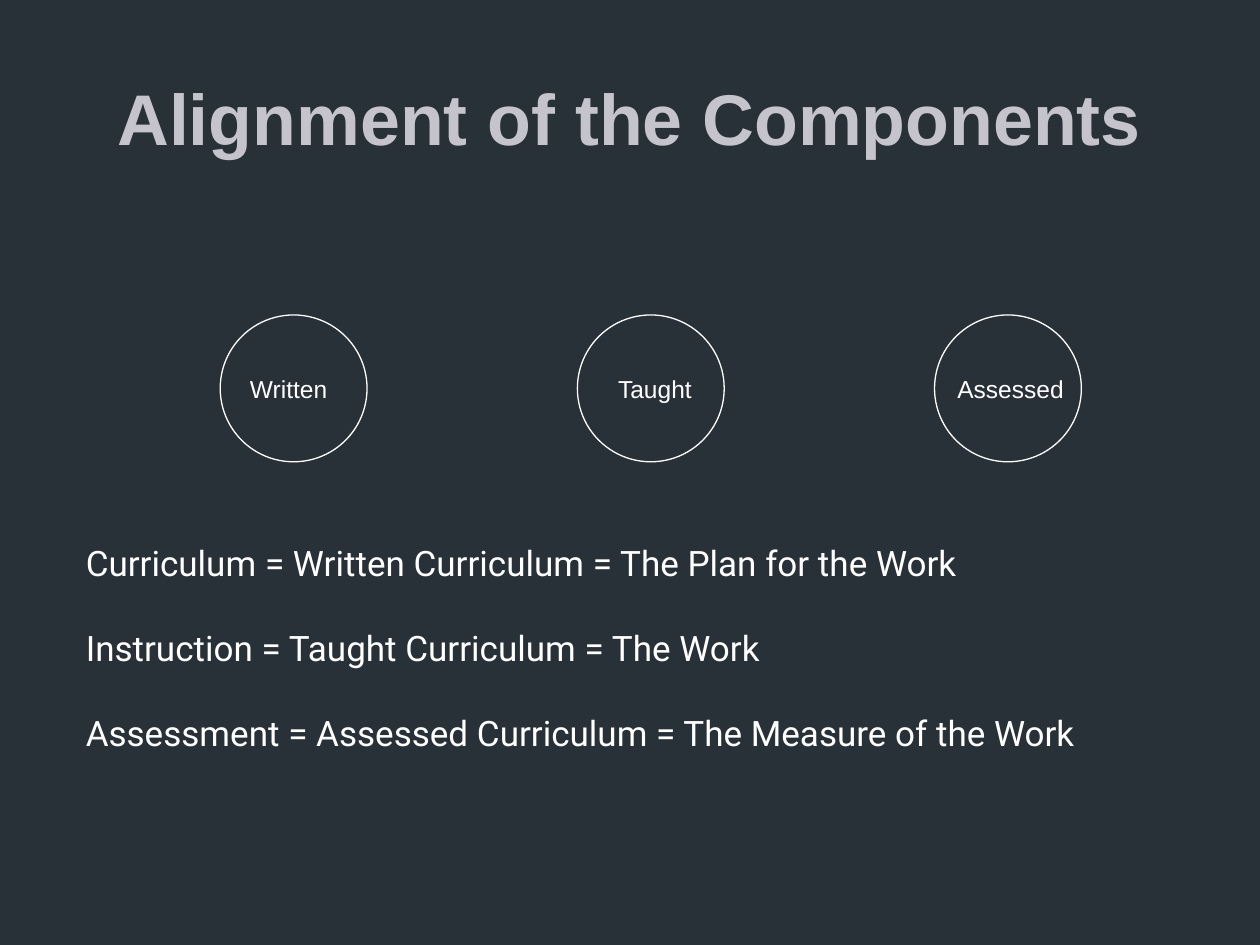
import dataclasses

import pptx
import pptx.dml.color
import pptx.enum.shapes
import pptx.enum.text
import pptx.util
from pptx.util import Cm


@dataclasses.dataclass(frozen=True)
class Theme:
    background: str = "283138"
    title_color: str = "C5C4CC"
    foreground: str = "FFFFFF"
    heading_font: str = "Arial"
    body_font: str = "Roboto"
    title_size: float = 41
    body_size: float = 20
    label_size: float = 14
    line_width: float = 0.75
    body_gap: float = 24.5


def rgb(value):
    return pptx.dml.color.RGBColor.from_string(value)


class SlideBuilder:
    def __init__(self, slide, theme):
        self.slide = slide
        self.theme = theme
        slide.background.fill.solid()
        slide.background.fill.fore_color.rgb = rgb(theme.background)

    def circle(self, left, top, diameter):
        shape = self.slide.shapes.add_shape(
            pptx.enum.shapes.MSO_SHAPE.OVAL,
            Cm(left), Cm(top), Cm(diameter), Cm(diameter))
        shape.shadow.inherit = False
        shape.fill.background()
        shape.line.color.rgb = rgb(self.theme.foreground)
        shape.line.width = pptx.util.Pt(self.theme.line_width)

    def text(self, box, lines, font, size, color, bold=False, gap=0,
             inset=0.25, centered=False):
        shape = self.slide.shapes.add_textbox(*map(Cm, box))
        frame = shape.text_frame
        frame.word_wrap = True
        frame.margin_left = Cm(inset)
        if centered:
            frame.vertical_anchor = pptx.enum.text.MSO_ANCHOR.MIDDLE
        frame.text = "\n".join(lines)
        for paragraph in frame.paragraphs:
            if centered:
                paragraph.alignment = pptx.enum.text.PP_ALIGN.CENTER
            paragraph.space_after = pptx.util.Pt(gap)
            paragraph.font.name = font
            paragraph.font.size = pptx.util.Pt(size)
            paragraph.font.bold = bold
            paragraph.font.color.rgb = rgb(color)

    def title(self, box, text):
        self.text(box, [text], self.theme.heading_font, self.theme.title_size,
                  self.theme.title_color, bold=True, centered=True)

    def label(self, box, text, inset):
        self.text(box, [text], self.theme.heading_font, self.theme.label_size,
                  self.theme.foreground, inset=inset)

    def body(self, box, lines):
        self.text(box, lines, self.theme.body_font, self.theme.body_size,
                  self.theme.foreground, gap=self.theme.body_gap)


def main():
    presentation = pptx.Presentation()
    presentation.slide_width = Cm(25.4)
    presentation.slide_height = Cm(19.05)
    slide = presentation.slides.add_slide(presentation.slide_layouts[6])
    builder = SlideBuilder(slide, Theme())

    # Title
    builder.title((1.27, 0.76, 22.86, 3.18), "Alignment of the Components")

    # Evenly spaced circles, each with its label
    first_left, top, pitch, diameter = 4.44, 6.35, 7.2, 2.96
    components = [  # text, offset from circle, width, left inset
        ("Written", 0.21, 2.34, 0.39),
        ("Taught", 0.43, 2.34, 0.39),
        ("Assessed", 0.21, 2.74, 0.25),
    ]
    for index, (text, offset, width, inset) in enumerate(components):
        left = first_left + index * pitch
        builder.circle(left, top, diameter)
        builder.label((left + offset, 7.41, width, 0.85), text, inset)

    # Definitions
    builder.body((1.48, 10.8, 22.43, 4.52), [
        "Curriculum = Written Curriculum = The Plan for the Work",
        "Instruction = Taught Curriculum = The Work",
        "Assessment = Assessed Curriculum = The Measure of the Work",
    ])

    presentation.save("out.pptx")


if __name__ == "__main__":
    main()
